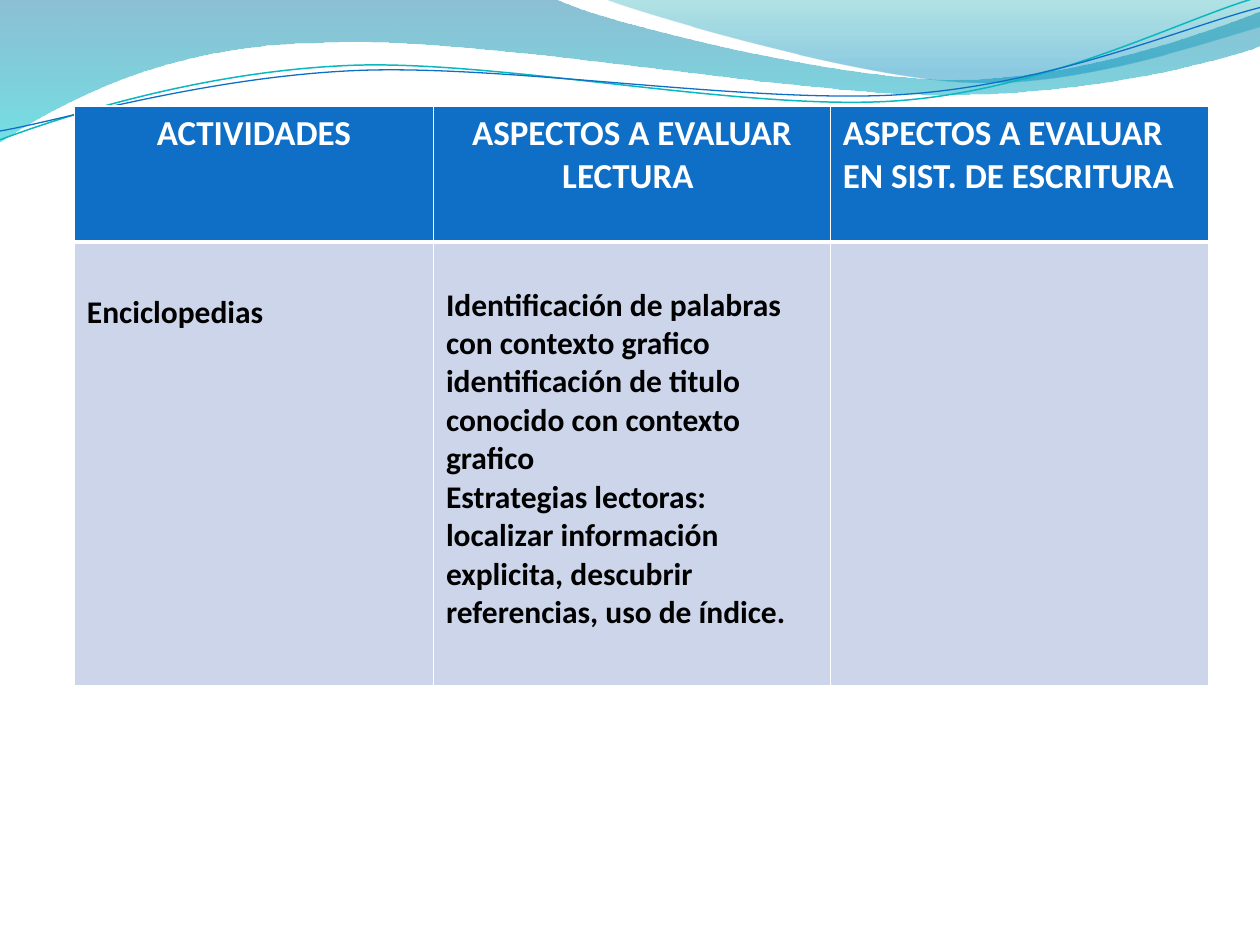
from dataclasses import dataclass

from lxml.etree import Element, SubElement
from pptx import Presentation
from pptx.dml.color import RGBColor
from pptx.enum.text import PP_ALIGN as Align
from pptx.oxml.ns import qn
from pptx.util import Inches, Pt

WHITE = RGBColor(0xFF, 0xFF, 0xFF)
BLACK = RGBColor(0x00, 0x00, 0x00)
BLUE = RGBColor(0x0F, 0x6F, 0xC6)
TEAL = RGBColor(0x0A, 0xB8, 0xBF)
PALE_BLUE = RGBColor(0xCC, 0xD5, 0xEA)
DEEP_BLUE = RGBColor(0x00, 0x74, 0xA1)
CYAN = RGBColor(0x00, 0xC6, 0xCF)
SEA_GREEN = RGBColor(0x00, 0xA1, 0xA9)
SKY_BLUE = RGBColor(0x00, 0x8B, 0xBF)

Point = tuple[float, float]


@dataclass(frozen=True)
class Stop:
    position: float
    color: RGBColor
    opacity: int


@dataclass(frozen=True)
class Wave:
    start: Point
    segments: tuple[tuple[Point, ...], ...]
    stops: tuple[Stop, ...] = ()
    line_color: RGBColor | None = None
    line_width: float = 0


@dataclass(frozen=True)
class Entry:
    paragraphs: tuple[str, ...] = ()
    align: Align = Align.LEFT
    top: float = 0.05


@dataclass(frozen=True)
class Row:
    height: float
    fill: RGBColor
    color: RGBColor
    size: int
    borders: dict[str, int]
    entries: tuple[Entry, ...]


WAVES = (
    Wave((0, -0.01), (
        ((4.4, -0.01),),
        ((4.76, 0.17), (6.64, 0.63), (7.58, 0.63)),
        ((8.53, 0.63), (9.58, 0.26), (10, 0.09)),
        ((10.01, 0.36),),
        ((9.83, 0.44), (8.7, 0.76), (7.46, 0.75)),
        ((6.22, 0.75), (3.82, 0.28), (2.57, 0.34)),
        ((1.29, 0.35), (0.46, 0.83), (-0.01, 1.13)),
    ), stops=(Stop(0, DEEP_BLUE, 45), Stop(1, CYAN, 55))),
    Wave((4.79, -0.01), (
        ((5.09, 0.11), (6.82, 0.62), (7.69, 0.65)),
        ((8.56, 0.69), (9.61, 0.32), (10, 0.21)),
        ((10, 0),),
    ), stops=(Stop(0, SEA_GREEN, 30), Stop(0.8, SKY_BLUE, 45))),
    Wave((0, 1.11), (
        ((0.48, 0.93), (1.58, 0.57), (2.77, 0.52)),
        ((3.95, 0.47), (5.93, 0.89), (7.13, 0.8)),
        ((8.33, 0.71), (9.38, 0.15), (9.98, -0.02)),
    ), line_color=TEAL, line_width=0.85),
    Wave((0, 1.04), (
        ((0.47, 0.96), (1.64, 0.61), (2.83, 0.56)),
        ((4.03, 0.51), (5.97, 0.83), (7.17, 0.75)),
        ((8.36, 0.67), (9.41, 0.21), (10, 0.06)),
    ), line_color=BLUE, line_width=0.75),
)

COLUMN_WIDTHS = (2.85, 3.15, 3)
ROWS = (
    Row(1.08, BLUE, WHITE, 20, {"lnL": 1, "lnR": 1, "lnT": 1, "lnB": 3}, (
        Entry(("ACTIVIDADES",), Align.CENTER),
        Entry(("ASPECTOS A EVALUAR LECTURA ",), Align.CENTER),
        Entry(("ASPECTOS A EVALUAR EN SIST. DE ESCRITURA",)),
    )),
    Row(3.52, PALE_BLUE, BLACK, 18, {"lnL": 1, "lnR": 1, "lnT": 3, "lnB": 1}, (
        Entry(("Enciclopedias",), top=0.41),
        Entry((
            "Identificación de palabras con contexto grafico",
            "identificación de titulo conocido con contexto grafico",
            "Estrategias lectoras: localizar información explicita, "
            "descubrir referencias, uso de índice.",
        ), top=0.35),
        Entry(),
    )),
)


def bend(band, segments: tuple[tuple[Point, ...], ...]) -> None:
    sides = iter(list(band._element.iter(qn("a:lnTo"))))
    for segment in segments:
        controls = [next(sides) for _ in segment]
        if len(controls) == 3:
            curve = Element(qn("a:cubicBezTo"))
            controls[0].addprevious(curve)
            for control in controls:
                curve.append(control[0])
                control.getparent().remove(control)


def draw_wave(slide, wave: Wave) -> None:
    points = [wave.start, *(point for segment in wave.segments for point in segment)]
    corners = [(Inches(x), Inches(y)) for x, y in points]
    builder = slide.shapes.build_freeform(*corners[0])
    builder.add_line_segments(corners[1:], close=bool(wave.stops))
    band = builder.convert_to_shape()
    bend(band, wave.segments)
    band.shadow.inherit = False
    if wave.stops:
        band.line.fill.background()
        band.fill.gradient()
        band.fill.gradient_angle = 270
        for target, stop in zip(band.fill.gradient_stops, wave.stops):
            target.position = stop.position
            target.color.rgb = stop.color
        for tint, stop in zip(band._element.iter(qn("a:srgbClr")), wave.stops):
            SubElement(tint, qn("a:alpha"), val=str(stop.opacity * 1000))
    else:
        band.fill.background()
        band.line.color.rgb = wave.line_color
        band.line.width = Pt(wave.line_width)


def write(frame, paragraphs: tuple[str, ...], *, size: int, color: RGBColor,
          align: Align = Align.LEFT, bold: bool = True, font: str = "Calibri") -> None:
    for index, text in enumerate(paragraphs):
        paragraph = frame.paragraphs[0] if index == 0 else frame.add_paragraph()
        paragraph.alignment = align
        run = paragraph.add_run()
        run.text = text
        run.font.name = font
        run.font.size = Pt(size)
        run.font.bold = bold
        run.font.color.rgb = color


def set_borders(cell, borders: dict[str, int]) -> None:
    properties = cell._tc.get_or_add_tcPr()
    for side, width in borders.items():
        edge = SubElement(properties, qn(f"a:{side}"), w=str(Pt(width)))
        paint = SubElement(edge, qn("a:solidFill"))
        SubElement(paint, qn("a:srgbClr"), val=str(WHITE))


def draw_table(slide) -> None:
    activities = slide.shapes.add_table(
        len(ROWS), len(COLUMN_WIDTHS), Inches(0.59), Inches(0.84),
        Inches(sum(COLUMN_WIDTHS)), Inches(sum(row.height for row in ROWS)),
    ).table
    for column, width in zip(activities.columns, COLUMN_WIDTHS):
        column.width = Inches(width)
    for table_row, row in zip(activities.rows, ROWS):
        table_row.height = Inches(row.height)
        for cell, entry in zip(table_row.cells, row.entries):
            set_borders(cell, row.borders)
            cell.fill.solid()
            cell.fill.fore_color.rgb = row.fill
            cell.margin_top = Inches(entry.top)
            write(cell.text_frame, entry.paragraphs, size=row.size,
                  color=row.color, align=entry.align)


def main() -> None:
    """Build the slide of reading and writing activities to assess."""
    deck = Presentation()
    deck.slide_width, deck.slide_height = Inches(10), Inches(7.5)
    slide = deck.slides.add_slide(deck.slide_layouts[6])
    for wave in WAVES:
        draw_wave(slide, wave)
    draw_table(slide)
    deck.save("out.pptx")


if __name__ == "__main__":
    main()
